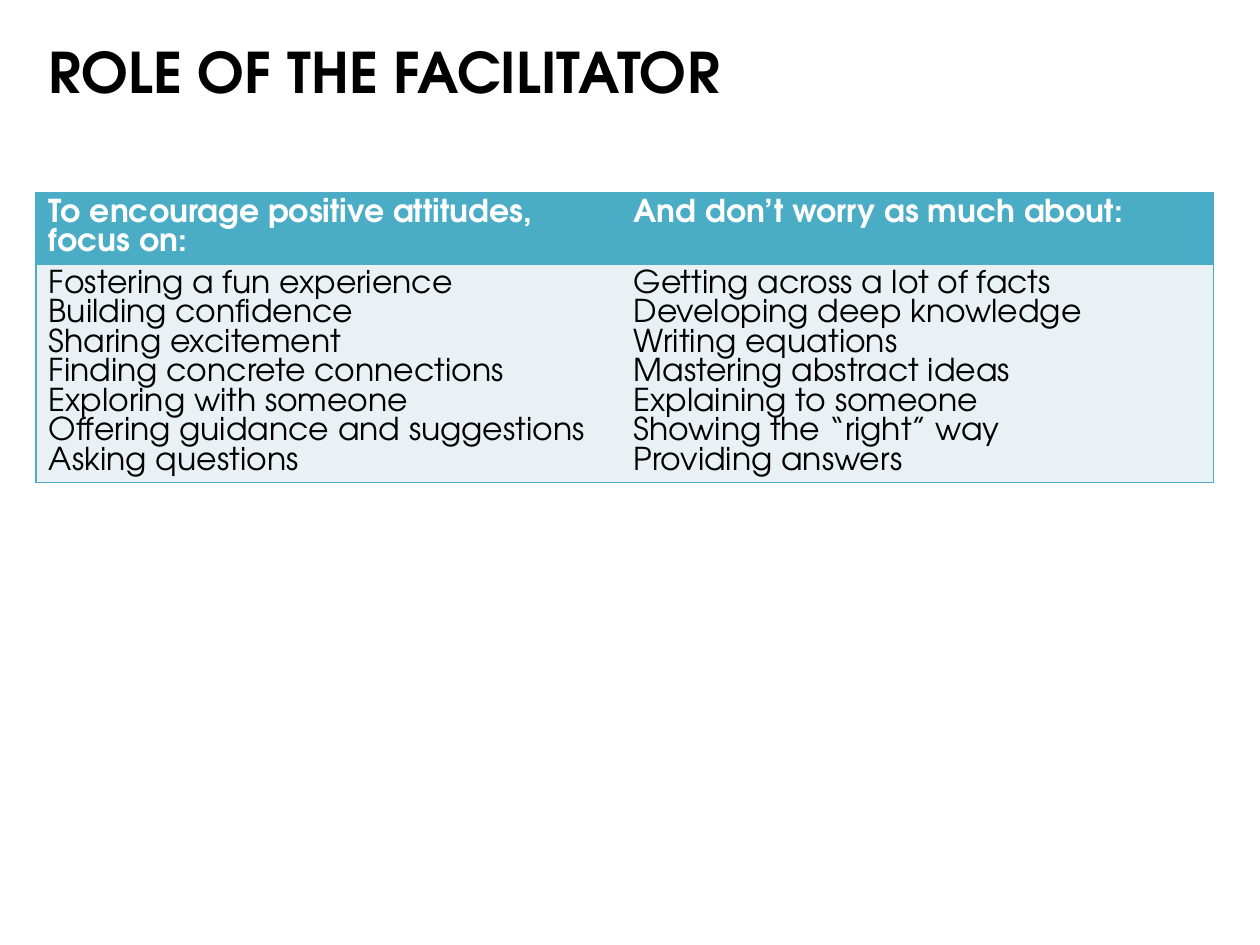
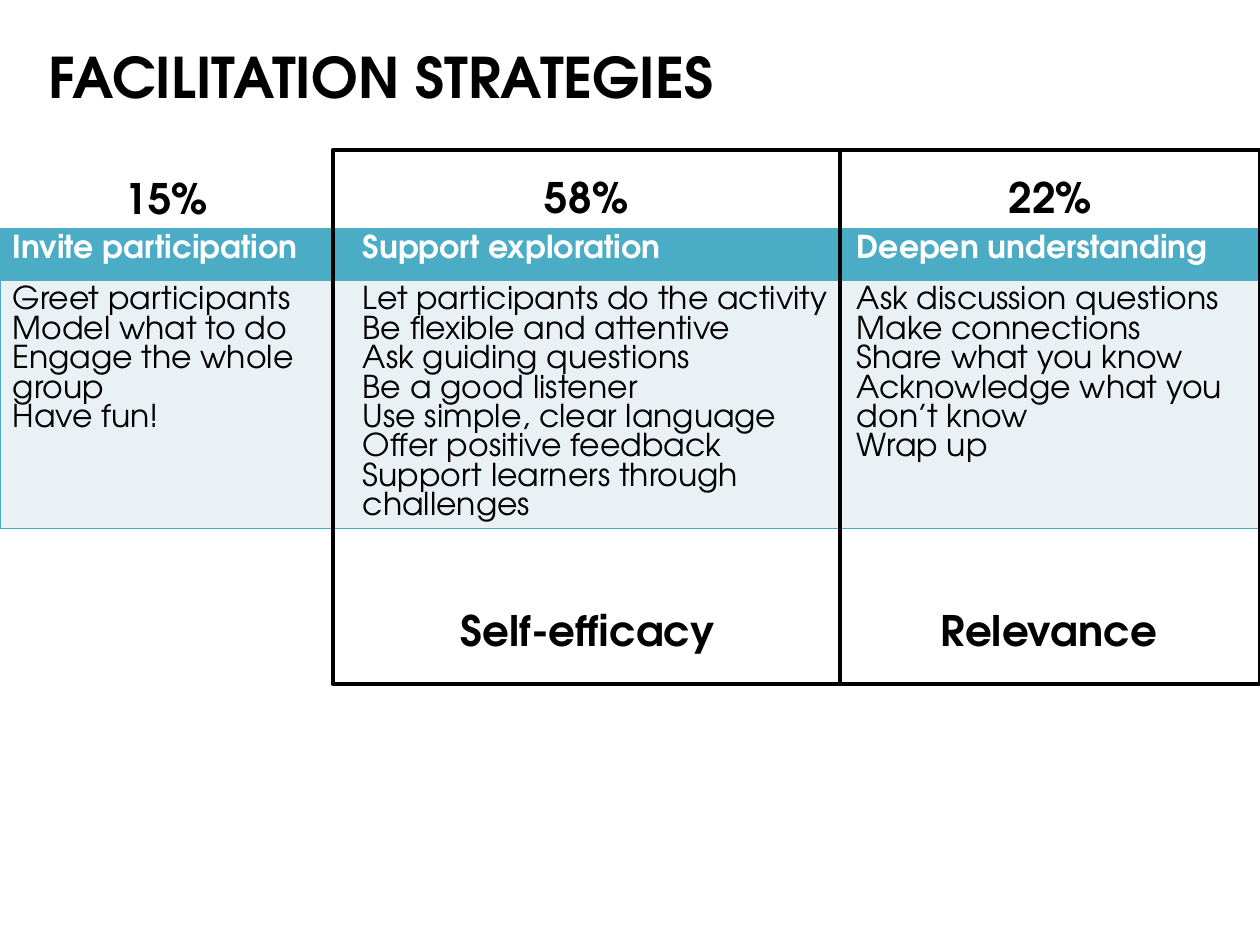
"""Build two slides on the role of the facilitator and facilitation strategies."""
from lxml.etree import SubElement
from pptx import Presentation
from pptx.dml.color import RGBColor
from pptx.enum.shapes import MSO_SHAPE
from pptx.enum.text import MSO_ANCHOR, MSO_AUTO_SIZE, PP_ALIGN
from pptx.oxml.ns import qn
from pptx.util import Cm, Pt

FONT = "TeX Gyre Adventor"
BLACK = RGBColor(0x00, 0x00, 0x00)
WHITE = RGBColor(0xFF, 0xFF, 0xFF)
TEAL = RGBColor(0x4B, 0xAC, 0xC6)
PALE = RGBColor(0xE9, 0xF1, 0xF5)
MARGIN, CONTENT_WIDTH = 0.73, 23.72


def style(paragraph, size, color, bold):
    font = paragraph.font
    font.name, font.size, font.bold = FONT, Pt(size), bold
    font.color.rgb = color


def add_topic(heading, heading_top, heading_height, left, top, widths, heights, columns):
    slide = deck.slides.add_slide(deck.slide_layouts[5])
    title = slide.shapes.title
    title.left, title.top = Cm(MARGIN), Cm(heading_top)
    title.width, title.height = Cm(CONTENT_WIDTH), Cm(heading_height)
    title.text_frame.text = heading
    title.text_frame.auto_size = MSO_AUTO_SIZE.NONE
    title.text_frame.vertical_anchor = MSO_ANCHOR.TOP
    title.text_frame.paragraphs[0].alignment = PP_ALIGN.LEFT
    style(title.text_frame.paragraphs[0], 32, BLACK, True)

    table = slide.shapes.add_table(2, len(columns), Cm(left), Cm(top),
                                   Cm(sum(widths)), Cm(sum(heights))).table
    for row, height in zip(table.rows, heights):
        row.height = Cm(height)
    for index, (width, texts) in enumerate(zip(widths, columns)):
        table.columns[index].width = Cm(width)
        outer_edges = {"lnL": index == 0, "lnR": index == len(columns) - 1,
                       "lnT": True, "lnB": True}
        looks = ((TEAL, WHITE, True), (PALE, BLACK, False))
        for row, (background, color, bold) in enumerate(looks):
            cell = table.cell(row, index)
            cell.text = texts[row]
            for paragraph in cell.text_frame.paragraphs:
                style(paragraph, 18, color, bold)
            properties = cell._tc.get_or_add_tcPr()
            for edge, visible in outer_edges.items():
                border = SubElement(properties, qn(f"a:{edge}"), w=str(Pt(1)))
                if visible:
                    paint = SubElement(border, qn("a:solidFill"))
                    SubElement(paint, qn("a:srgbClr"), val=str(TEAL))
                else:
                    SubElement(border, qn("a:noFill"))
            cell.fill.solid()
            cell.fill.fore_color.rgb = background
    return slide


deck = Presentation()
deck.slide_width, deck.slide_height = Cm(25.4), Cm(19.05)

add_topic(
    "ROLE OF THE FACILITATOR", 0.62, 2, MARGIN, 3.88, (11.79, 11.94), (1.44, 4.39),
    (("To encourage positive attitudes, focus on:",
      "Fostering a fun experience\nBuilding confidence\nSharing excitement\n"
      "Finding concrete connections\nExploring with someone\n"
      "Offering guidance and suggestions\nAsking questions"),
     ("And don’t worry as much about:",
      "Getting across a lot of facts\nDeveloping deep knowledge\nWriting equations\n"
      "Mastering abstract ideas\nExplaining to someone\n"
      "Showing the “right” way\nProviding answers")))

strategies = add_topic(
    "FACILITATION STRATEGIES", 0.72, 3.43, 0, 4.61, (7.06, 9.96, 8.38), (1.04, 4.98),
    (("Invite participation",
      "Greet participants\nModel what to do\nEngage the whole group\nHave fun!"),
     ("Support exploration",
      "Let participants do the activity\nBe flexible and attentive\n"
      "Ask guiding questions\nBe a good listener\nUse simple, clear language\n"
      "Offer positive feedback\nSupport learners through challenges"),
     ("Deepen understanding",
      "Ask discussion questions\nMake connections\nShare what you know\n"
      "Acknowledge what you don’t know\nWrap up")))

captions = (
    ("15%", 0, 3.35, 6.71),
    ("58%", 6.71, 3.33, 10.23),
    ("22%", 16.94, 3.33, 8.46),
    ("Self-efficacy", 7.19, 12.07, 9.32),
    ("Relevance", 17.32, 12.07, 7.65),
)
for words, left, top, width in captions:
    caption = strategies.shapes.add_textbox(Cm(left), Cm(top), Cm(width), Cm(1.27)).text_frame
    caption.word_wrap = True
    caption.auto_size = MSO_AUTO_SIZE.SHAPE_TO_FIT_TEXT
    caption.text = words
    caption.paragraphs[0].alignment = PP_ALIGN.CENTER
    style(caption.paragraphs[0], 24, BLACK, True)

for left, width in ((6.71, 10.23), (16.94, 8.46)):
    outcome_frame = strategies.shapes.add_shape(
        MSO_SHAPE.RECTANGLE, Cm(left), Cm(3.02), Cm(width), Cm(10.77))
    outcome_frame.shadow.inherit = False
    outcome_frame.fill.background()
    outcome_frame.line.color.rgb = BLACK
    outcome_frame.line.width = Pt(2.25)

deck.save("out.pptx")
